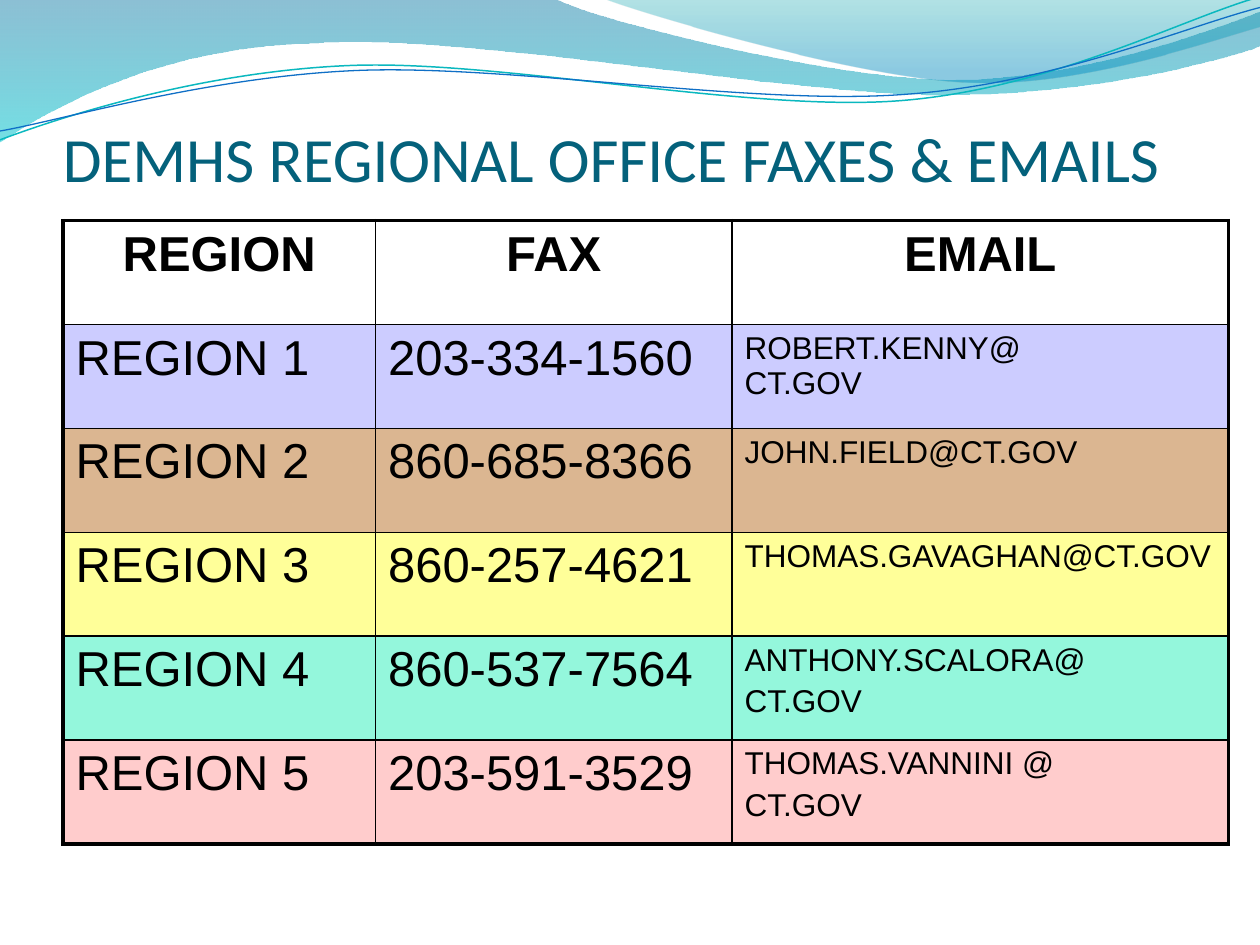
from dataclasses import dataclass
from math import cos, radians, sin

from lxml import etree
from pptx import Presentation
from pptx.dml.color import RGBColor
from pptx.enum.text import MSO_ANCHOR, PP_ALIGN
from pptx.oxml.ns import qn
from pptx.util import Inches, Pt

CENTER, LEFT = PP_ALIGN.CENTER, PP_ALIGN.LEFT
BOTTOM = MSO_ANCHOR.BOTTOM


@dataclass(frozen=True)
class Theme:
    title_font: str = "Calibri"
    table_font: str = "Arial"
    title_size: int = 36
    large_size: int = 28
    email_size: int = 18
    title_color: str = "04617B"
    ink: str = "000000"
    teal_line: str = "0AB8BF"
    blue_line: str = "0F6FC6"
    # Gradient stops: position, colour, opacity in percent
    long_wave: tuple = ((0, "0074A1", 45), (1, "00C6CF", 55))
    short_wave: tuple = ((0, "00A1A9", 30), (0.8, "008BBF", 45))
    outer_border: float = 2.25
    inner_border: float = 1


THEME = Theme()

# A segment of two numbers is a straight line, one of six is a cubic curve.
LONG_WAVE = [
    (0, 0), (4.4, -0.01),
    (4.76, 0.17, 6.64, 0.63, 7.58, 0.63), (8.53, 0.63, 9.58, 0.26, 10, 0.09),
    (10.01, 0.36),
    (9.83, 0.44, 8.7, 0.76, 7.46, 0.75), (6.22, 0.75, 3.82, 0.28, 2.57, 0.34),
    (1.29, 0.36, 0.46, 0.83, -0.01, 1.13), (0, 0),
]
SHORT_WAVE = [
    (4.79, -0.01),
    (5.09, 0.11, 6.82, 0.62, 7.69, 0.65), (8.56, 0.69, 9.61, 0.32, 10, 0.21),
    (10, 0), (4.79, -0.01),
]
TEAL_CURVE = [
    (0, 1.11),
    (0.48, 0.93, 1.58, 0.57, 2.77, 0.52), (3.95, 0.47, 5.93, 0.89, 7.13, 0.8),
    (8.33, 0.71, 9.38, 0.15, 9.98, -0.02),
]
BLUE_CURVE = [
    (0, 1.04),
    (0.47, 0.96, 1.64, 0.61, 2.83, 0.56), (4.03, 0.51, 5.97, 0.84, 7.17, 0.75),
    (8.36, 0.67, 9.41, 0.21, 10, 0.06),
]
CURVE_TILT = -2.7

HEADINGS = ("REGION", "FAX", "EMAIL")
# Region, fax, email lines, row colour
OFFICES = [
    ("REGION 1", "203-334-1560", ("ROBERT.KENNY@", "CT.GOV"), "CCCCFF"),
    ("REGION 2", "860-685-8366", ("JOHN.FIELD@CT.GOV",), "DBB691"),
    ("REGION 3", "860-257-4621", ("THOMAS.GAVAGHAN@CT.GOV",), "FFFF99"),
    ("REGION 4", "860-537-7564", ("ANTHONY.SCALORA@", "CT.GOV"), "94F7DC"),
    ("REGION 5", "203-591-3529", ("THOMAS.VANNINI @", "CT.GOV"), "FFCCCC"),
]
TIGHT_EMAIL_REGION = "REGION 1"
COLUMN_WIDTHS = (2.48, 2.83, 3.94)
ROW_HEIGHT = 0.825


def rgb(value):
    return RGBColor.from_string(value)


def turn(segments, degrees, center_x, center_y):
    """Rotate every point clockwise about the centre."""
    c, s = cos(radians(degrees)), sin(radians(degrees))
    turned = []
    for segment in segments:
        points = []
        for x, y in zip(segment[::2], segment[1::2]):
            dx, dy = x - center_x, y - center_y
            points += [center_x + dx * c - dy * s, center_y + dx * s + dy * c]
        turned.append(tuple(points))
    return turned


def add_outline(slide, segments, closed):
    """Lay out the control points as lines, then join each curve's three into one."""
    start, *rest = segments
    builder = slide.shapes.build_freeform(Inches(start[0]), Inches(start[1]))
    builder.add_line_segments(
        [(Inches(x), Inches(y)) for segment in rest
         for x, y in zip(segment[::2], segment[1::2])], close=closed)
    outline = builder.convert_to_shape()
    outline.shadow.inherit = False
    lines = iter(list(outline.element.spPr.iter(qn("a:lnTo"))))
    for segment in rest:
        first = next(lines)
        if len(segment) == 6:
            first.tag = qn("a:cubicBezTo")
            for line in (next(lines), next(lines)):
                first.append(line[0])
                line.getparent().remove(line)
    return outline


def add_wave(slide, segments, stops):
    wave = add_outline(slide, segments, closed=True)
    wave.line.fill.background()
    wave.fill.gradient()
    wave.fill.gradient_angle = 270
    for stop, (position, color, _) in zip(wave.fill.gradient_stops, stops):
        stop.position = position
        stop.color.rgb = rgb(color)
    for color_node, (_, _, opacity) in zip(wave.element.spPr.iter(qn("a:srgbClr")), stops):
        etree.SubElement(color_node, qn("a:alpha"), val=str(opacity * 1000))


def add_curve(slide, segments, center, color, width):
    curve = add_outline(slide, turn(segments, -CURVE_TILT, *center), closed=False)
    curve.rotation = CURVE_TILT
    curve.fill.background()
    curve.line.color.rgb = rgb(color)
    curve.line.width = Pt(width)


def add_run(paragraph, text, font, size, color, bold=False):
    run = paragraph.add_run()
    run.text = text
    run.font.name = font
    run.font.size = Pt(size)
    run.font.bold = bold
    run.font.color.rgb = rgb(color)


def add_title(slide, text):
    box = slide.shapes.add_textbox(Inches(0.5), Inches(0.3), Inches(9), Inches(1.25))
    frame = box.text_frame
    frame.word_wrap = True
    frame.vertical_anchor = BOTTOM
    frame.margin_left = frame.margin_right = frame.margin_bottom = 0
    add_run(frame.paragraphs[0], text, THEME.title_font, THEME.title_size, THEME.title_color)


def set_borders(cell, widths):
    """Draw the left, right, top and bottom borders, in that order."""
    properties = cell._tc.get_or_add_tcPr()
    for side, width in zip("LRTB", widths):
        line = etree.SubElement(properties, qn(f"a:ln{side}"), w=str(Pt(width)))
        fill = etree.SubElement(line, qn("a:solidFill"))
        etree.SubElement(fill, qn("a:srgbClr"), val=THEME.ink)


def fill_cell(cell, lines, size, color=None, heading=False, gap=0.2):
    """Write the lines; gap is the space between them as a share of the type size."""
    if color:
        cell.fill.solid()
        cell.fill.fore_color.rgb = rgb(color)
    else:
        cell.fill.background()
    frame = cell.text_frame
    for index, line in enumerate(lines):
        paragraph = frame.add_paragraph() if index else frame.paragraphs[0]
        paragraph.alignment = CENTER if heading else LEFT
        if index:
            paragraph.space_before = Pt(size * gap)
        add_run(paragraph, line, THEME.table_font, size, THEME.ink, heading)


def add_office_table(slide):
    row_count, column_count = len(OFFICES) + 1, len(HEADINGS)
    table = slide.shapes.add_table(
        row_count, column_count, Inches(0.5), Inches(1.75),
        Inches(sum(COLUMN_WIDTHS)), Inches(ROW_HEIGHT * row_count)).table
    table.first_row = table.horz_banding = False
    for column, width in zip(table.columns, COLUMN_WIDTHS):
        column.width = Inches(width)
    for r, row in enumerate(table.rows):
        row.height = Inches(ROW_HEIGHT)
        for c, cell in enumerate(row.cells):
            on_edge = (c == 0, c == column_count - 1, r == 0, r == row_count - 1)
            set_borders(cell, [THEME.outer_border if edge else THEME.inner_border
                               for edge in on_edge])
    for c, heading in enumerate(HEADINGS):
        fill_cell(table.cell(0, c), [heading], THEME.large_size, heading=True)
    for r, (region, fax, email, color) in enumerate(OFFICES, start=1):
        fill_cell(table.cell(r, 0), [region], THEME.large_size, color)
        fill_cell(table.cell(r, 1), [fax], THEME.large_size, color)
        gap = 0 if region == TIGHT_EMAIL_REGION else 0.2
        fill_cell(table.cell(r, 2), email, THEME.email_size, color, gap=gap)


def main():
    deck = Presentation()
    deck.slide_width, deck.slide_height = Inches(10), Inches(7.5)
    slide = deck.slides.add_slide(deck.slide_layouts[6])
    add_wave(slide, LONG_WAVE, THEME.long_wave)
    add_wave(slide, SHORT_WAVE, THEME.short_wave)
    add_curve(slide, TEAL_CURVE, (4.99, 0.58), THEME.teal_line, 0.85)
    add_curve(slide, BLUE_CURVE, (5, 0.59), THEME.blue_line, 0.75)
    add_title(slide, "DEMHS REGIONAL OFFICE FAXES & EMAILS")
    add_office_table(slide)
    deck.save("out.pptx")


if __name__ == "__main__":
    main()
